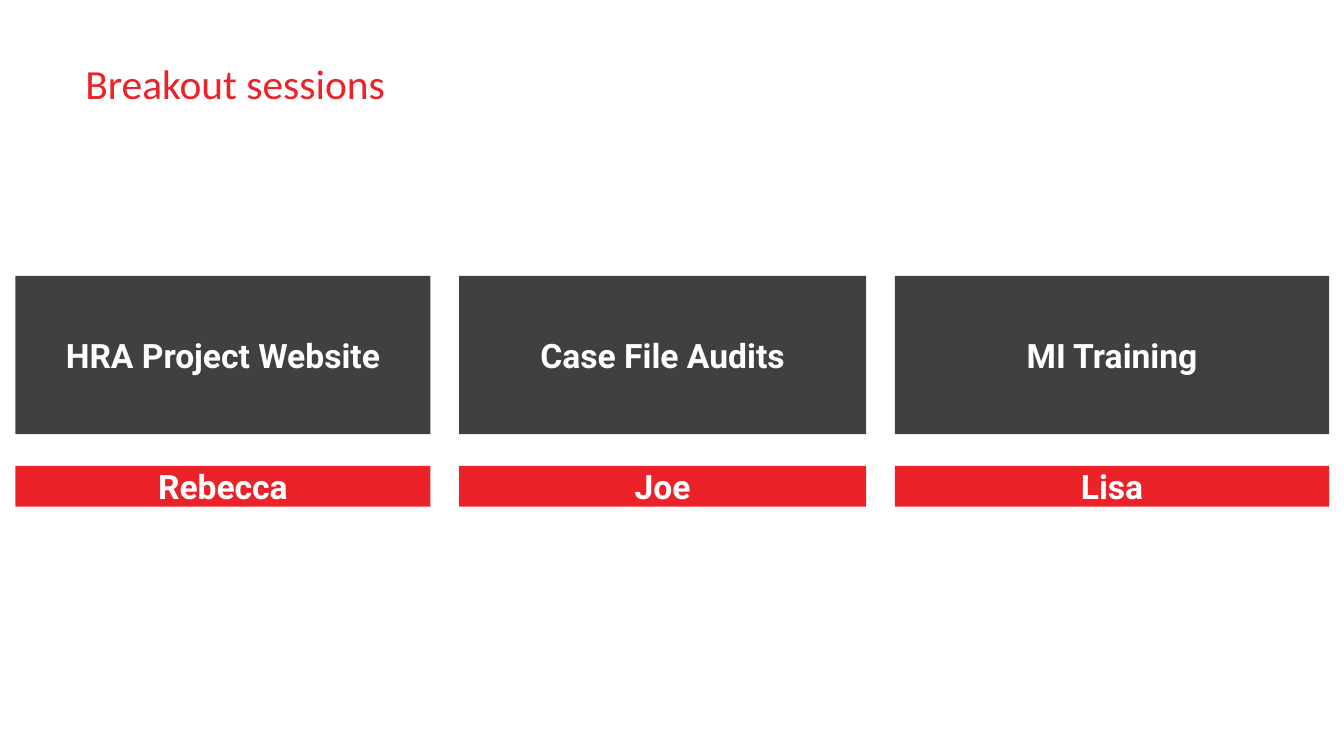
from dataclasses import dataclass

from pptx import Presentation
from pptx.dml.color import RGBColor as Rgb
from pptx.enum.shapes import MSO_SHAPE as Kind
from pptx.enum.text import MSO_ANCHOR as Anchor, PP_ALIGN as Align
from pptx.util import Cm, Pt


@dataclass(frozen=True)
class Theme:
    red: Rgb = Rgb(0xEB, 0x22, 0x27)
    dark: Rgb = Rgb(0x40, 0x40, 0x41)
    white: Rgb = Rgb(0xFF, 0xFF, 0xFF)
    head: Pt = Pt(29.6)
    label: Pt = Pt(24)
    sans: str = "Calibri"
    bold: str = "Roboto"


def apply(obj, form):
    for key, val in form.items():
        setattr(obj, key, val)


class Deck:
    def __init__(self, theme, slide):
        self.theme = theme
        self.slide = slide

    def label(self, frame, text, color, font, form):
        para = frame.paragraphs[0]
        apply(para, form)
        run = para.add_run()
        run.text = text
        apply(run.font, font)
        run.font.color.rgb = color
        return para

    def title(self, text, *area):
        look = self.theme
        box = self.slide.shapes.add_textbox(*map(Cm, area))
        box.text_frame.word_wrap = True
        para = self.label(
            box.text_frame, text, look.red,
            {"size": look.head, "name": look.sans},
            {"line_spacing": 0.7, "space_before": Pt(10)},
        )
        props = para._p.get_or_add_pPr()
        props.set("marL", str(Cm(1.27)))
        props.set("indent", str(Cm(-0.64)))

    def block(self, text, fill, *area):
        look = self.theme
        box = self.slide.shapes.add_shape(Kind.RECTANGLE, *map(Cm, area))
        box.shadow.inherit = False
        box.fill.solid()
        box.fill.fore_color.rgb = fill
        box.line.fill.background()
        pad = Cm(0.25)
        apply(box.text_frame, {
            "word_wrap": True,
            "vertical_anchor": Anchor.MIDDLE,
            "margin_left": pad,
            "margin_right": pad,
            "margin_top": pad,
            "margin_bottom": pad,
        })
        self.label(
            box.text_frame, text, look.white,
            {"size": look.label, "name": look.bold, "bold": True},
            {"alignment": Align.CENTER},
        )


def main():
    show = Presentation()
    apply(show, {"slide_width": Cm(33.87), "slide_height": Cm(19.05)})
    theme = Theme()
    deck = Deck(theme, show.slides.add_slide(show.slide_layouts[6]))
    deck.title("Breakout sessions", 1.27, 1.68, 28.55, 1.55)

    left, gap = 0.39, 0.72
    for topic, host, width in (
        ("HRA Project Website", "Rebecca", 10.46),
        ("Case File Audits", "Joe", 10.26),
        ("MI Training", "Lisa", 10.95),
    ):
        deck.block(topic, theme.dark, left, 6.95, width, 3.99)
        deck.block(host, theme.red, left, 11.74, width, 1.03)
        left += width + gap

    show.save("out.pptx")


if __name__ == "__main__":
    main()
